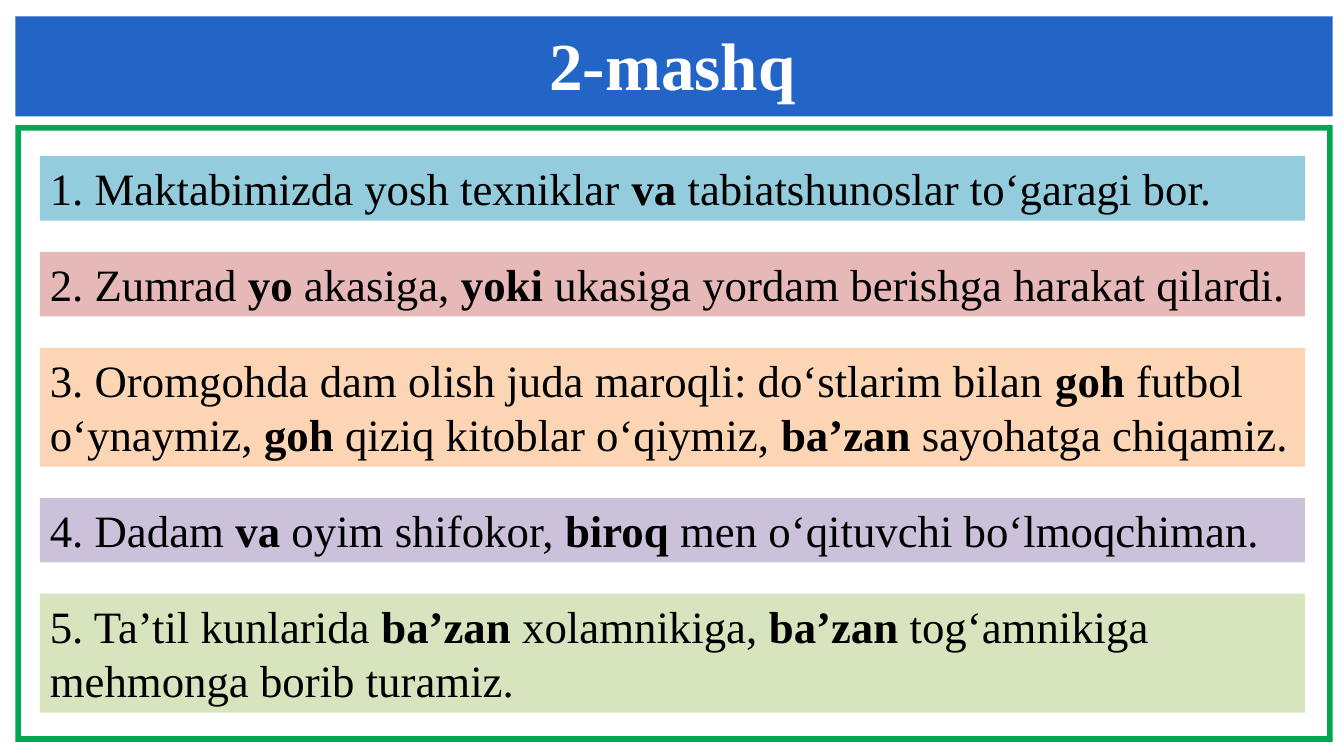
"""Build the "2-mashq" exercise slide with five coloured sentences."""
from dataclasses import dataclass

import pptx
import pptx.dml.color
import pptx.enum.shapes
import pptx.enum.text
import pptx.util

RGBColor = pptx.dml.color.RGBColor
Pt = pptx.util.Pt
Shapes = pptx.enum.shapes.MSO_SHAPE
Align = pptx.enum.text.PP_ALIGN
Anchor = pptx.enum.text.MSO_ANCHOR

WHITE = RGBColor(0xFF, 0xFF, 0xFF)
BLACK = RGBColor(0x00, 0x00, 0x00)
GREEN = RGBColor(0x00, 0xA6, 0x50)
BLUE = RGBColor(0x23, 0x65, 0xC7)
AQUA = RGBColor(0x93, 0xCD, 0xDD)
ROSE = RGBColor(0xE6, 0xB9, 0xB8)
PEACH = RGBColor(0xFC, 0xD5, 0xB5)
LILAC = RGBColor(0xCC, 0xC1, 0xDA)
LIME = RGBColor(0xD7, 0xE4, 0xBD)

FONT = "Times New Roman"
BOLD_MARK = "*"
PANEL_LEFT, PANEL_WIDTH = 11, 941
FRAME_HEIGHT, FRAME_BORDER = 440.6, 4
SENTENCE_LEFT, SENTENCE_WIDTH = 28.5, 903.6
FIRST_TOP, GAP = 111.6, 22.3
LINE_HEIGHT, PADDING = 38.9, 7.2


@dataclass(frozen=True)
class Sentence:
    """A sentence with its marked conjunctions, its colour and its line count."""

    text: str
    fill: RGBColor
    lines: int = 1


SENTENCES = [
    Sentence("1. Maktabimizda yosh texniklar *va *tabiatshunoslar to‘garagi bor.", AQUA),
    Sentence("2. Zumrad *yo *akasiga, *yoki *ukasiga yordam berishga harakat qilardi.", ROSE),
    Sentence("3. Oromgohda dam olish juda maroqli: do‘stlarim bilan *goh *futbol o‘ynaymiz, "
             "*goh *qiziq kitoblar o‘qiymiz, *ba’zan *sayohatga chiqamiz.", PEACH, 2),
    Sentence("4. Dadam *va *oyim shifokor, *biroq* men o‘qituvchi bo‘lmoqchiman.", LILAC),
    Sentence("5. Ta’til kunlarida *ba’zan *xolamnikiga, *ba’zan *tog‘amnikiga "
             "mehmonga borib turamiz.", LIME, 2),
]


def add_box(page: pptx.slide.Slide, kind: Shapes, left: float, top: float,
            width: float, height: float, fill: RGBColor) -> pptx.shapes.autoshape.Shape:
    """Add a flat filled shape without an outline."""
    box = page.shapes.add_shape(kind, Pt(left), Pt(top), Pt(width), Pt(height))
    box.shadow.inherit = False
    box.fill.solid()
    box.fill.fore_color.rgb = fill
    box.line.fill.background()
    return box


def add_span(para: pptx.text.text._Paragraph, text: str, size: float,
             color: RGBColor, bold: bool) -> None:
    """Add one formatted run to a paragraph."""
    span = para.add_run()
    span.text = text
    span.font.name = FONT
    span.font.size = Pt(size)
    span.font.bold = bold
    span.font.color.rgb = color


def add_sentence(page: pptx.slide.Slide, sentence: Sentence, top: float) -> float:
    """Draw a sentence on its coloured band and return the band's bottom."""
    height = sentence.lines * LINE_HEIGHT + PADDING
    box = add_box(page, Shapes.RECTANGLE, SENTENCE_LEFT, top,
                  SENTENCE_WIDTH, height, sentence.fill)
    frame = box.text_frame
    frame.word_wrap = True
    frame.vertical_anchor = Anchor.TOP
    para = frame.paragraphs[0]
    para.alignment = Align.LEFT
    for index, text in enumerate(sentence.text.split(BOLD_MARK)):
        add_span(para, text, 32, BLACK, index % 2 == 1)
    return top + height


def add_title(page: pptx.slide.Slide, text: str) -> None:
    """Place the title placeholder in front of the banner."""
    title = page.shapes.title
    title.left, title.top, title.width, title.height = Pt(21), Pt(16.6), Pt(918.7), Pt(58.3)
    frame = title.text_frame
    frame.margin_left = frame.margin_top = frame.margin_right = frame.margin_bottom = 0
    frame.vertical_anchor = Anchor.TOP
    para = frame.paragraphs[0]
    para.alignment = Align.CENTER
    para.line_spacing = 1.0
    add_span(para, text, 48, WHITE, True)
    title.element.getparent().append(title.element)


def main() -> None:
    """Build and save the deck."""
    deck = pptx.Presentation()
    deck.slide_width, deck.slide_height = Pt(960), Pt(540)
    page = deck.slides.add_slide(deck.slide_layouts.get_by_name("Title Only"))
    border = add_box(page, Shapes.FRAME, PANEL_LEFT, 89.3, PANEL_WIDTH, FRAME_HEIGHT, GREEN)
    border.adjustments[0] = FRAME_BORDER / FRAME_HEIGHT
    add_box(page, Shapes.RECTANGLE, PANEL_LEFT, 11.7, PANEL_WIDTH, 71.5, BLUE)
    add_title(page, "2-mashq")
    top = FIRST_TOP
    for sentence in SENTENCES:
        top = add_sentence(page, sentence, top) + GAP
    deck.save("out.pptx")


if __name__ == "__main__":
    main()
